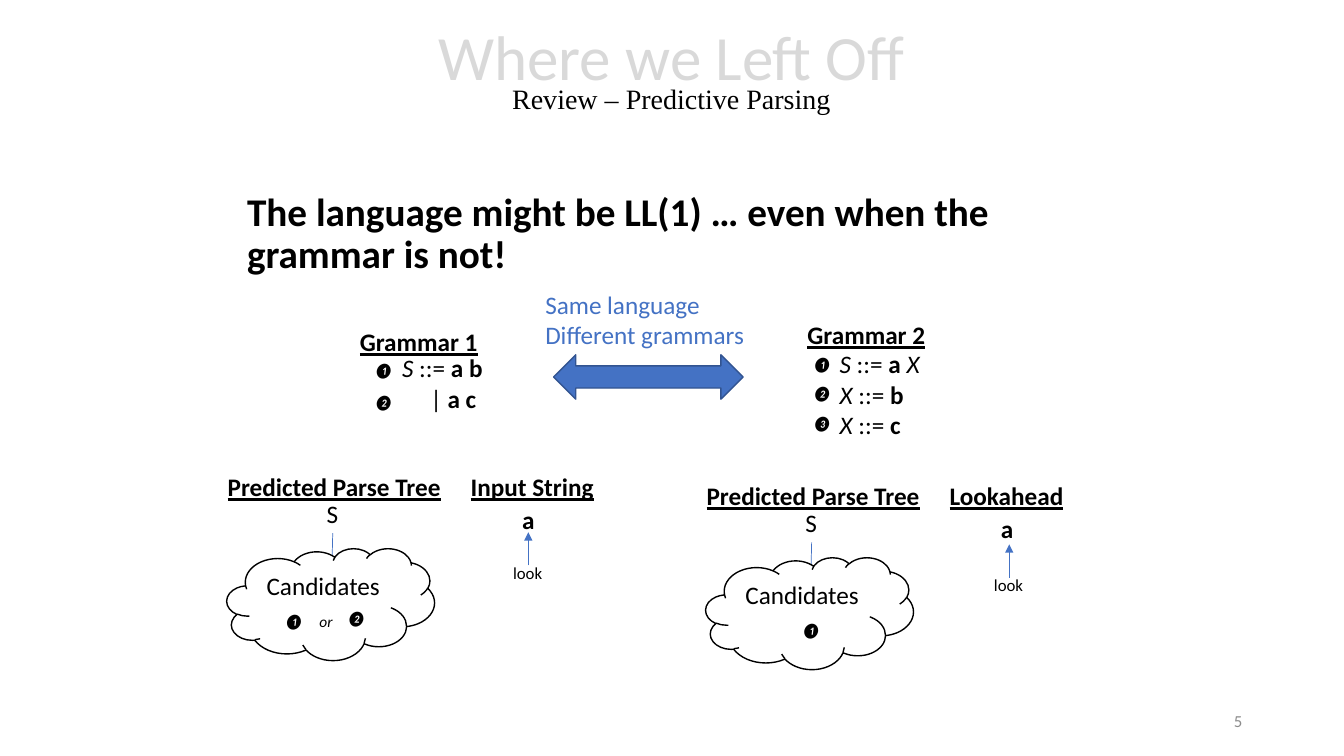
"""Build the slide that reviews predictive parsing with two equivalent grammars."""
import pptx
import pptx.util
import pptx.dml.color
import pptx.enum.shapes
import pptx.enum.text
import pptx.oxml.ns
import lxml.etree

Inches, Pt = pptx.util.Inches, pptx.util.Pt
RGBColor = pptx.dml.color.RGBColor
MSO_SHAPE = pptx.enum.shapes.MSO_SHAPE
PP_ALIGN = pptx.enum.text.PP_ALIGN
MSO_ANCHOR = pptx.enum.text.MSO_ANCHOR
MSO_AUTO_SIZE = pptx.enum.text.MSO_AUTO_SIZE
qn = pptx.oxml.ns.qn

BLACK = RGBColor(0x00, 0x00, 0x00)
WHITE = RGBColor(0xFF, 0xFF, 0xFF)
BLUE = RGBColor(0x44, 0x72, 0xC4)
DARK_BLUE = RGBColor(0x32, 0x54, 0x91)
PALE_GRAY = RGBColor(0xD9, 0xD9, 0xD9)
GRAY = RGBColor(0x8C, 0x8C, 0x8C)

prs = pptx.Presentation()
prs.slide_width, prs.slide_height = Inches(13.33), Inches(7.5)
s = prs.slides.add_slide(prs.slide_layouts[1])


def add_label(x, y, w, h, lines, size=18, color=BLACK):
    """Add a text box; each line is a list of (text, style letters b, i, u)."""
    sp = s.shapes.add_textbox(Inches(x), Inches(y), Inches(w), Inches(h))
    tf = sp.text_frame
    tf.word_wrap = False
    tf.auto_size = MSO_AUTO_SIZE.SHAPE_TO_FIT_TEXT
    for n, line in enumerate(lines):
        p = tf.add_paragraph() if n else tf.paragraphs[0]
        for text, style in line:
            r = p.add_run()
            r.text = text
            r.font.name, r.font.size = "Calibri", Pt(size)
            r.font.color.rgb = color
            r.font.bold, r.font.italic, r.font.underline = (k in style for k in "biu")
    return sp


def add_line(x1, y1, x2, y2):
    """Add a thin blue line without a shadow."""
    line = s.shapes.add_connector(pptx.enum.shapes.MSO_CONNECTOR.STRAIGHT,
                                  Inches(x1), Inches(y1), Inches(x2), Inches(y2))
    line.line.color.rgb = BLUE
    line.line.width = Pt(0.5)
    lxml.etree.SubElement(line._element.spPr, qn("a:effectLst"))
    return line


title, body = s.shapes.title, s.placeholders[1]
for sp, top, height in ((title, 0.03, 1.45), (body, 1.86, 4.76)):
    sp.left, sp.top = Inches(2.35), Inches(top)
    sp.width, sp.height = Inches(8.62), Inches(height)
    sp.text_frame.auto_size = MSO_AUTO_SIZE.NONE

title.text_frame.text = "Where we Left Off\vReview – Predictive Parsing"
title.text_frame.vertical_anchor = MSO_ANCHOR.MIDDLE
p = title.text_frame.paragraphs[0]
p.alignment, p.line_spacing = PP_ALIGN.CENTER, 0.7
title_fonts = (("Calibri", 45, PALE_GRAY), ("Times New Roman", 20, BLACK))
for r, (font, size, color) in zip(p.runs, title_fonts):
    r.font.name, r.font.size, r.font.color.rgb = font, Pt(size), color
p._p.find(qn("a:br")).get_or_add_rPr().set("sz", "4500")

body.text_frame.text = "The language might be LL(1) … even when the grammar is not!"
p = body.text_frame.paragraphs[0]
p.line_spacing, p.space_before = 0.9, Pt(10)
pPr = p._p.get_or_add_pPr()
pPr.set("marL", "0")
pPr.set("indent", "0")
lxml.etree.SubElement(pPr, qn("a:buNone"))
r = p.runs[0]
r.font.name, r.font.size, r.font.bold = "Calibri", Pt(28), True
r.font.color.rgb = BLACK

sp = add_label(9.42, 6.95, 3, 0.4, [[("5", "")]], 12, GRAY)
sp.text_frame.word_wrap = True
sp.text_frame.auto_size = MSO_AUTO_SIZE.NONE
sp.text_frame.vertical_anchor = MSO_ANCHOR.MIDDLE
sp.text_frame.paragraphs[0].alignment = PP_ALIGN.RIGHT

panels = (
    (2.16, 4.63, "Input String", 1.43, 5.24, 5.61),
    (6.91, 4.72, "Lookahead", 1.34, 10.01, 5.73),
)
for x, y, heading, heading_w, look_x, look_y in panels:
    add_label(x, y, 2.33, 0.4, [[("Predicted Parse Tree", "bu")]])
    add_label(x + 2.41, y, heading_w, 0.4, [[(heading, "bu")]])
    add_label(x + 0.98, y + 0.26, 0.32, 0.4, [[("S", "")]])
    add_label(x + 2.92, y + 0.32, 0.33, 0.4, [[("a", "b")]])
    add_line(x + 1.14, y + 0.66, x + 1.13, y + 1.1)

    cloud = s.shapes.add_shape(MSO_SHAPE.CLOUD, Inches(x + 0.09), Inches(y + 0.81),
                               Inches(2.06), Inches(1.11))
    cloud.shadow.inherit = False
    cloud.fill.solid()
    cloud.fill.fore_color.rgb = WHITE
    cloud.line.color.rgb, cloud.line.width = BLACK, Pt(1)
    tf = cloud.text_frame
    tf.text = "Candidates"
    tf.vertical_anchor = MSO_ANCHOR.TOP
    tf.paragraphs[0].alignment = PP_ALIGN.CENTER
    r = tf.paragraphs[0].runs[0]
    r.font.name, r.font.size, r.font.color.rgb = "Calibri", Pt(18), BLACK

    arrow = add_line(look_x, look_y, look_x, look_y - 0.33)
    lxml.etree.SubElement(arrow.line._get_or_add_ln(), qn("a:tailEnd"), type="triangle")
    add_label(look_x - 0.25, look_y - 0.08, 0.5, 0.3, [[("look", "")]], 12)

add_label(3.47, 3.19, 1.38, 0.4, [[("Grammar 1", "bu")]])
sp = add_label(3.89, 3.45, 1.07, 0.71, [
    [("S", "i"), (" ::= ", ""), ("a b", "b")],
    [("|", ""), (" a c", "b")],
])
sp.text_frame.paragraphs[1]._p.get_or_add_pPr().set("marL", str(Inches(0.28)))

add_label(7.91, 3.12, 1.38, 0.4, [[("Grammar 2", "bu")]])
add_label(8.23, 3.41, 1, 1.01, [
    [("S", "i"), (" ::= ", ""), ("a ", "b"), ("X", "i")],
    [("X", "i"), (" ::=", ""), (" b", "b")],
    [("X", "i"), (" ::=", ""), (" c", "b")],
])

markers = (
    (3.61, 3.53, "❶"), (3.61, 3.85, "❷"),
    (7.96, 3.47, "❶"), (7.96, 3.76, "❷"), (7.96, 4.06, "❸"),
    (2.72, 6.02, "❶"), (3.07, 6.02, "or"), (3.34, 5.99, "❷"),
    (7.85, 6.11, "❶"),
)
for x, y, text in markers:
    add_label(x, y, 0.35 if text == "or" else 0.41, 0.29, [[(text, "i")]], 11)

arrow = s.shapes.add_shape(MSO_SHAPE.LEFT_RIGHT_ARROW, Inches(5.49), Inches(3.52),
                           Inches(1.88), Inches(0.44))
arrow.shadow.inherit = False
arrow.fill.solid()
arrow.fill.fore_color.rgb = BLUE
arrow.line.color.rgb, arrow.line.width = DARK_BLUE, Pt(1)
add_label(5.31, 2.82, 2.2, 0.71,
          [[("Same language", "")], [("Different grammars", "")]], color=BLUE)

prs.save("out.pptx")
